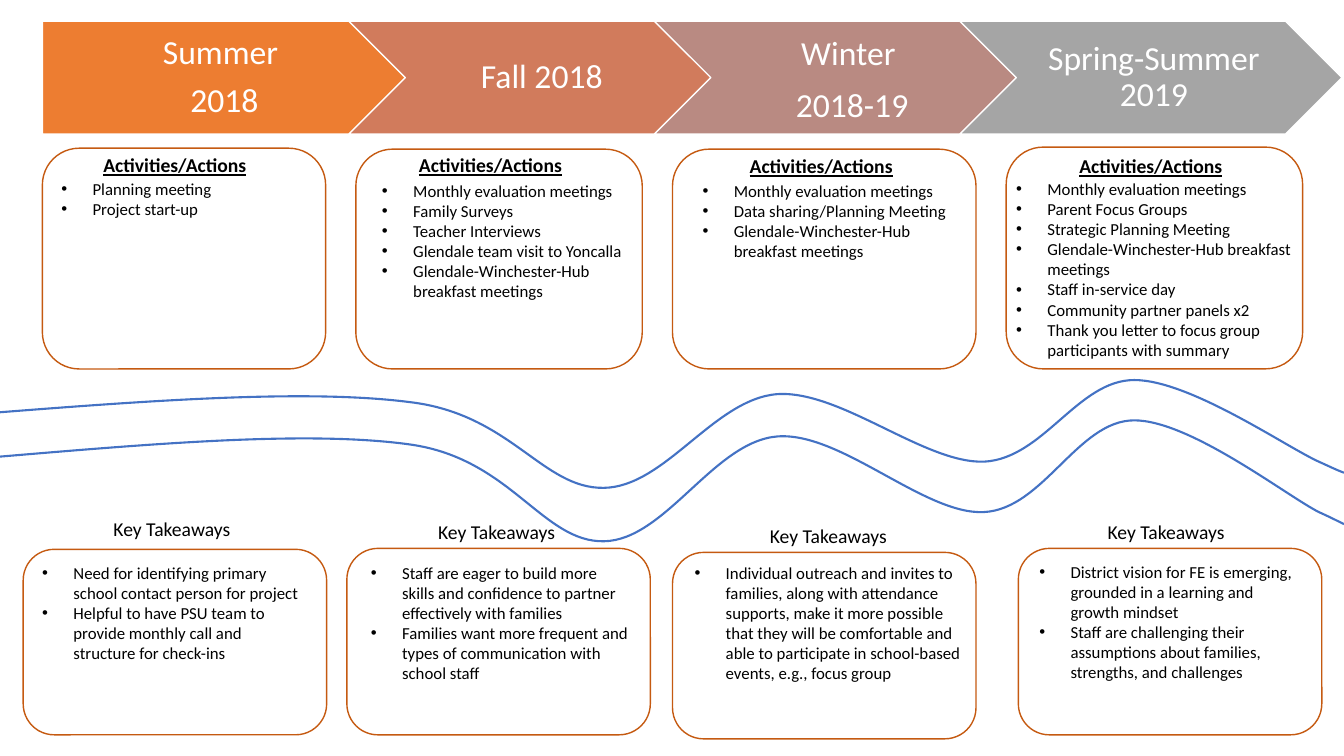
from lxml import etree
from pptx import Presentation
from pptx import util as u
from pptx.dml.color import RGBColor
from pptx.enum import shapes, text
from pptx.oxml import ns

PX = 9144  # 100 px to the inch
WHITE = RGBColor(0xFF, 0xFF, 0xFF)
BLACK = RGBColor(0, 0, 0)
RUST = RGBColor(0xC5, 0x5A, 0x11)
BLUE = RGBColor(0x44, 0x72, 0xC4)
ORANGE = RGBColor(0xED, 0x7D, 0x31)
CORAL = RGBColor(0xD1, 0x7B, 0x5C)
ROSE = RGBColor(0xB9, 0x8A, 0x82)
GREY = RGBColor(0xA5, 0xA5, 0xA5)
FONT = "Calibri"
KIND = shapes.MSO_SHAPE
CENTER = text.PP_ALIGN.CENTER

# label, fill, text left, text width, left inset, line spacing
SEASONS = [
    ("Summer \n2018", ORANGE, 42, 351, 14, 0.9),
    ("Fall 2018", CORAL, 401, 267, 10, 0.9),
    ("Winter\n 2018-19", ROSE, 705, 267, 10, 1.0),
    ("Spring-Summer 2019", GREY, 1008, 267, 10, 0.9),
]

# card box, heading corner, list box, list items
ACTIONS = [
    ((42, 147, 281, 219), (89, 147), (51, 172, 259, 50),
     ["Planning meeting", "Project start-up"]),
    ((353, 148, 284, 218), (402, 147), (369, 174, 268, 131),
     ["Monthly evaluation meetings", "Family Surveys",
      "Teacher Interviews", "Glendale team visit to Yoncalla",
      "Glendale-Winchester-Hub breakfast meetings"]),
    ((667, 148, 301, 218), (730, 148), (687, 174, 270, 111),
     ["Monthly evaluation meetings", "Data sharing/Planning Meeting",
      "Glendale-Winchester-Hub breakfast meetings"]),
    ((998, 146, 294, 220), (1057, 148), (998, 172, 306, 192),
     ["Monthly evaluation meetings", "Parent Focus Groups",
      "Strategic Planning Meeting",
      "Glendale-Winchester-Hub breakfast meetings",
      "Staff in-service day", "Community partner panels x2",
      "Thank you letter to focus group participants with summary"]),
]
LESSONS = [
    ((23, 545, 301, 184), (86, 508), (32, 553, 279, 111),
     ["Need for identifying primary school contact person for project",
      "Helpful to have PSU team to provide monthly call and structure "
      "for check-ins"]),
    ((344, 544, 301, 185), (408, 511), (358, 553, 279, 131),
     ["Staff are eager to build more skills and confidence to partner "
      "effectively with families",
      "Families want more frequent and types of communication with "
      "school staff"]),
    ((667, 548, 301, 185), (737, 515), (679, 553, 287, 131),
     ["Individual outreach and invites to families, along with "
      "attendance supports, make it more possible that they will be "
      "comfortable and able to participate in school-based events, "
      "e.g., focus group"]),
    ((1010, 544, 301, 185), (1072, 511), (1021, 552, 279, 131),
     ["District vision for FE is emerging, grounded in a learning and "
      "growth mindset",
      "Staff are challenging their assumptions about families, "
      "strengths, and challenges"]),
]

# start point, then two handles and an end point for each bend
RIVER_X = [0, 154, 307, 407, 507, 538, 599, 660, 708, 771, 834, 917, 976,
           1035, 1069, 1125, 1180, 1275, 1308, 1317, 1325, 1333]
TOP_BANK = [409, 397, 386, 399, 411, 485, 484, 483, 396, 391, 387, 460, 458,
            455, 377, 377, 377, 443, 458, 462, 466, 469]
LOW_BANK = [453, 440, 427, 441, 455, 538, 537, 536, 438, 433, 428, 511, 508,
            505, 417, 417, 417, 491, 508, 512, 516, 520]


def emu(*vals):
    return [u.Emu(v * PX) for v in vals]


def add_form(parent, kind, box, line, fill=None):
    form = parent.add_shape(kind, *emu(*box))
    form.shadow.inherit = False
    if fill is None:
        form.fill.background()
    else:
        form.fill.solid()
        form.fill.fore_color.rgb = fill
    form.line.color.rgb = line
    form.line.width = u.Pt(1)


def add_text(parent, box, words, size, color=BLACK):
    frame = parent.add_textbox(*emu(*box)).text_frame
    frame.word_wrap = True
    frame.text = words
    for para in frame.paragraphs:
        for run in para.runs:
            run.font.name = FONT
            run.font.size = u.Pt(size)
            run.font.color.rgb = color
    return frame


def add_season(group, index, label, fill, left, width, inset, space):
    kind = KIND.CHEVRON if index else KIND.PENTAGON
    add_form(group, kind, (42 + 303 * index + (index > 0), 21, 379, 112),
             WHITE, fill)
    frame = add_text(group, (left, 21, width, 112), label, 24, WHITE)
    frame.vertical_anchor = text.MSO_ANCHOR.MIDDLE
    (frame.margin_left, frame.margin_top, frame.margin_right,
     frame.margin_bottom) = emu(inset, 7, 4, 7)
    for para in frame.paragraphs:
        para.alignment = CENTER
        para.line_spacing = space
        para.space_after = u.Pt(8.4)


def add_head(parent, corner, words, strong):
    frame = add_text(parent, (*corner, 169, 34), words, 14)
    frame.auto_size = text.MSO_AUTO_SIZE.SHAPE_TO_FIT_TEXT
    para = frame.paragraphs[0]
    para.alignment = CENTER
    if strong:
        font = para.runs[0].font
        font.bold = font.underline = True


def add_list(parent, box, items):
    frame = add_text(parent, box, "\n".join(items), 12)
    frame.auto_size = text.MSO_AUTO_SIZE.SHAPE_TO_FIT_TEXT
    for para in frame.paragraphs:
        props = para._p.get_or_add_pPr()
        props.set("marL", str(31 * PX))
        props.set("indent", str(-31 * PX))
        face = etree.SubElement(props, ns.qn("a:buFont"))
        face.set("typeface", "Arial")
        etree.SubElement(props, ns.qn("a:buChar")).set("char", "•")


def add_card(parent, head, strong, box, corner, area, items):
    add_form(parent, KIND.ROUNDED_RECTANGLE, box, RUST)
    add_head(parent, corner, head, strong)
    add_list(parent, area, items)


def add_bank(parent, ys):
    """Draw one smooth river bank, each three points forming a Bezier bend."""
    first, *rest = [emu(x, y) for x, y in zip(RIVER_X, ys)]
    pen = parent.build_freeform(*first)
    pen.add_line_segments(rest, close=False)
    bank = pen.convert_to_shape()
    steps = list(bank._element.iter(ns.qn("a:lnTo")))
    for i in range(0, len(steps), 3):
        bend = etree.Element(ns.qn("a:cubicBezTo"))
        steps[i].addprevious(bend)
        for step in steps[i:i + 3]:
            bend.append(step[0])
            step.getparent().remove(step)
    bank.shadow.inherit = False
    bank.fill.background()
    bank.line.color.rgb = BLUE
    bank.line.width = u.Pt(1.5)


def main():
    deck = Presentation()
    deck.slide_width, deck.slide_height = u.Inches(13.33), u.Inches(7.5)
    tree = deck.slides.add_slide(deck.slide_layouts[6]).shapes
    group = tree.add_group_shape().shapes
    for index, season in enumerate(SEASONS):
        add_season(group, index, *season)
    for card in ACTIONS:
        add_card(tree, "Activities/Actions", True, *card)
    for ys in (TOP_BANK, LOW_BANK):
        add_bank(tree, ys)
    for card in LESSONS:
        add_card(tree, "Key Takeaways", False, *card)
    deck.save("out.pptx")


if __name__ == "__main__":
    main()
